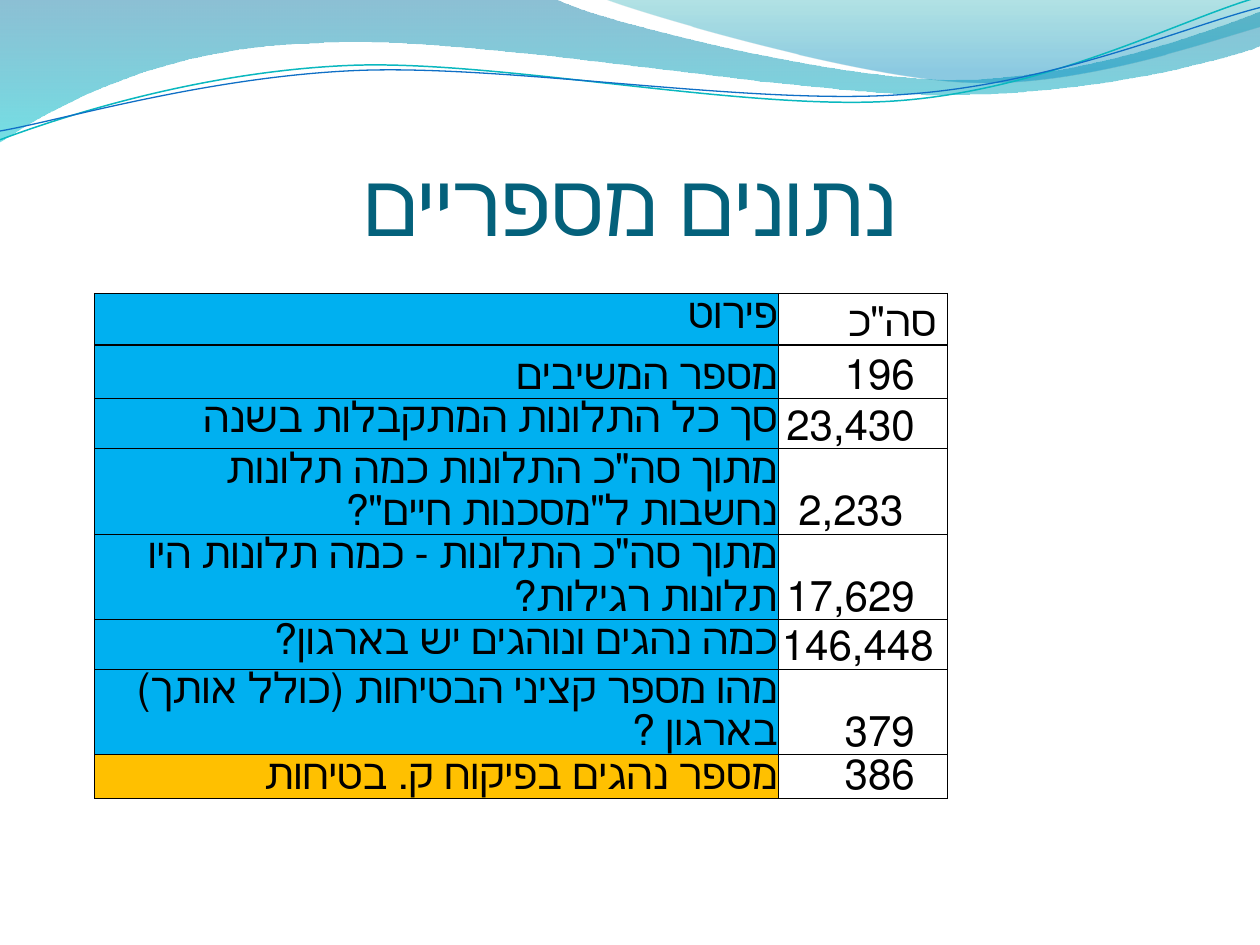
from pptx import Presentation
from pptx.dml.color import RGBColor
from pptx.enum.text import MSO_ANCHOR, PP_ALIGN
from pptx.oxml import parse_xml
from pptx.oxml.ns import nsdecls, qn
from pptx.util import Inches, Pt
from lxml.etree import SubElement

TITLE = "נתונים מספריים"

# label, value, row height, gap right of the value
ROWS = [
    ("פירוט", 'סה"כ', 0.41, 0.09),
    ("מספר המשיבים", "196", 0.42, 0.26),
    ("סך כל התלונות המתקבלות בשנה", "23,430", 0.4, 0.26),
    ('מתוך סה"כ התלונות כמה תלונות נחשבות ל"מסכנות חיים"?', "2,233", 0.68, 0.35),
    ('מתוך סה"כ התלונות - כמה תלונות היו תלונות רגילות?', "17,629", 0.68, 0.26),
    ("כמה נהגים ונוהגים יש בארגון?", "146,448", 0.39, 0.11),
    ("מהו מספר קציני הבטיחות (כולל אותך) בארגון ?", "379", 0.68, 0.26),
    ("מספר נהגים בפיקוח ק. בטיחות", "386", 0.34, 0.26),
]
COLUMN_WIDTHS = [5.43, 1.34]
TABLE_LEFT, TABLE_TOP = 0.75, 2.33

THEME = {
    "title": {"name": "Calibri", "size": Pt(50), "bold": False,
              "color": "04617B"},
    "table": {"name": "Arial", "size": Pt(24), "bold": False,
              "color": "000000"},
    "label_fill": "00B0F0",
    "last_label_fill": "FFC000",
    "border": "000000",
    "heavy": 1,
    "light": 0.5,
}

# Each step is a point (2 numbers) or a Bezier curve (6 numbers).
# Gradient stops: position %, colour, opacity %.
BANDS = [
    ([(0, 0), (4.4, -0.01), (4.76, 0.17, 6.64, 0.63, 7.58, 0.63),
      (8.53, 0.63, 9.58, 0.26, 10, 0.09), (10.01, 0.36),
      (9.83, 0.44, 8.7, 0.76, 7.46, 0.75), (6.22, 0.75, 3.82, 0.28, 2.57, 0.34),
      (1.29, 0.36, 0.46, 0.83, -0.01, 1.13)],
     [(0, "0074A1", 45), (100, "00C6CF", 55)]),
    ([(4.79, -0.01), (5.09, 0.11, 6.82, 0.62, 7.69, 0.65),
      (8.56, 0.69, 9.61, 0.32, 10, 0.21), (10, 0)],
     [(0, "00A1A9", 30), (80, "008BBF", 45)]),
]
STRANDS = [
    ([(0, 1.11), (0.48, 0.93, 1.58, 0.57, 2.77, 0.52),
      (3.95, 0.47, 5.93, 0.89, 7.13, 0.8), (8.33, 0.71, 9.38, 0.15, 9.98, -0.02)],
     "0AB8BF", 0.85),
    ([(0, 1.04), (0.47, 0.96, 1.64, 0.61, 2.83, 0.56),
      (4.03, 0.51, 5.97, 0.84, 7.17, 0.75), (8.36, 0.67, 9.41, 0.21, 10, 0.06)],
     "0F6FC6", 0.75),
]


def set_values(target, values):
    for attribute, value in values.items():
        setattr(target, attribute, value)


def add_wave(slide, steps, closed):
    """Draw all points as segments, then join each curve's three into a Bezier."""
    points = [(Inches(step[i]), Inches(step[i + 1]))
              for step in steps for i in range(0, len(step), 2)]
    builder = slide.shapes.build_freeform(*points[0])
    builder.add_line_segments(points[1:], close=closed)
    wave = builder.convert_to_shape()
    wave.shadow.inherit = False

    segments = iter(list(wave._element.iter(qn("a:lnTo"))))
    for step in steps[1:]:
        segment = next(segments)
        if len(step) == 6:
            curve = SubElement(segment.getparent(), qn("a:cubicBezTo"))
            segment.addprevious(curve)
            for part in (segment, next(segments), next(segments)):
                curve.append(part[0])
                part.getparent().remove(part)
    return wave


def add_band(slide, steps, stops):
    band = add_wave(slide, steps, True)
    band.line.fill.background()
    stop_xml = "".join(
        f'<a:gs pos="{position * 1000}"><a:srgbClr val="{color}">'
        f'<a:alpha val="{opacity * 1000}"/></a:srgbClr></a:gs>'
        for position, color, opacity in stops)
    gradient = parse_xml(
        f'<a:gradFill {nsdecls("a")} rotWithShape="1"><a:gsLst>{stop_xml}</a:gsLst>'
        '<a:lin ang="5400000" scaled="1"/></a:gradFill>')
    band._element.spPr.find(qn("a:custGeom")).addnext(gradient)


def add_strand(slide, steps, color, width):
    strand = add_wave(slide, steps, False)
    strand.fill.background()
    strand.line.color.rgb = RGBColor.from_string(color)
    strand.line.width = Pt(width)


def write_hebrew(frame, text, style, alignment):
    paragraph = frame.paragraphs[0]
    paragraph.alignment = alignment
    paragraph._p.get_or_add_pPr().set("rtl", "1")
    run = paragraph.add_run()
    run.text = text
    set_values(run.font, {k: v for k, v in style.items() if k != "color"})
    run.font.color.rgb = RGBColor.from_string(style["color"])


def set_borders(cell, widths):
    """Draw the left, right, top and bottom borders, in points."""
    properties = cell._tc.get_or_add_tcPr()
    for index, (side, width) in enumerate(zip("LRTB", widths)):
        properties.insert(index, parse_xml(
            f'<a:ln{side} {nsdecls("a")} w="{Pt(width)}"><a:solidFill>'
            f'<a:srgbClr val="{THEME["border"]}"/></a:solidFill></a:ln{side}>'))


def add_figures_table(slide):
    heights = [row[2] for row in ROWS]
    table = slide.shapes.add_table(
        len(ROWS), len(COLUMN_WIDTHS), Inches(TABLE_LEFT), Inches(TABLE_TOP),
        Inches(sum(COLUMN_WIDTHS)), Inches(sum(heights))).table
    set_values(table, {"first_row": False, "horz_banding": False})
    for column, width in zip(table.columns, COLUMN_WIDTHS):
        column.width = Inches(width)

    heavy, light = THEME["heavy"], THEME["light"]
    last = len(ROWS) - 1
    for r, (label, value, height, gap) in enumerate(ROWS):
        table.rows[r].height = Inches(height)
        top = heavy if r <= 1 else light
        bottom = heavy if r == 0 else light
        for c, (text, right_margin) in enumerate([(label, 0.01), (value, gap)]):
            cell = table.cell(r, c)
            low = c == 1 or r == 1
            set_values(cell, {
                "margin_left": Inches(0.01), "margin_right": Inches(right_margin),
                "margin_top": Inches(0.01), "margin_bottom": 0,
                "vertical_anchor": MSO_ANCHOR.BOTTOM if low else MSO_ANCHOR.TOP,
            })
            write_hebrew(cell.text_frame, text, THEME["table"], PP_ALIGN.RIGHT)
            if c == 0:
                fill = "last_label_fill" if r == last else "label_fill"
                cell.fill.solid()
                cell.fill.fore_color.rgb = RGBColor.from_string(THEME[fill])
            else:
                cell.fill.background()
            left = light if c == 0 and r >= last - 1 else heavy
            set_borders(cell, (left, heavy, top, bottom))


def main():
    deck = Presentation()
    set_values(deck, {"slide_width": Inches(10), "slide_height": Inches(7.5)})
    slide = deck.slides.add_slide(deck.slide_layouts[5])

    for band in BANDS:
        add_band(slide, *band)
    for strand in STRANDS:
        add_strand(slide, *strand)

    title = slide.shapes.title
    slide.shapes._spTree.append(title._element)
    set_values(title, {"left": Inches(0.5), "top": Inches(0.77),
                       "width": Inches(9), "height": Inches(1.25)})
    set_values(title.text_frame, {
        "margin_left": 0, "margin_right": 0, "margin_top": Inches(0.05),
        "margin_bottom": 0, "vertical_anchor": MSO_ANCHOR.BOTTOM})
    write_hebrew(title.text_frame, TITLE, THEME["title"], PP_ALIGN.CENTER)

    add_figures_table(slide)
    deck.save("out.pptx")


if __name__ == "__main__":
    main()
